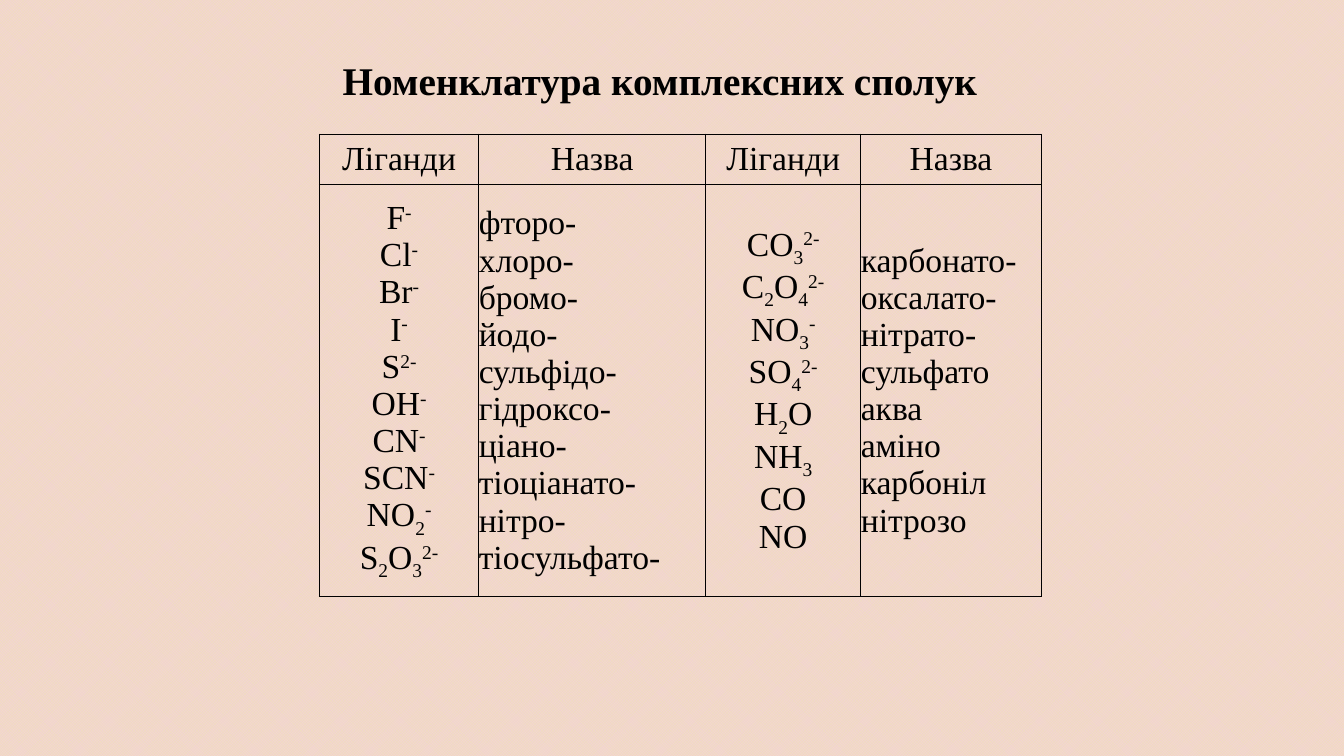
from dataclasses import dataclass

from lxml import etree
from pptx import Presentation
from pptx import util as u
from pptx.dml.color import RGBColor
from pptx.enum import dml, text
from pptx.oxml.ns import qn


@dataclass(frozen=True)
class Theme:
    font: str = "Times New Roman"
    ink: str = "000000"
    check_front: str = "F0E0B5"
    check_back: str = "F3D5D3"
    title_size: float = 28
    body_size: float = 24
    border_width: float = 1


@dataclass(frozen=True)
class Column:
    heading: str
    width: float
    alignment: text.PP_ALIGN
    entries: tuple[str, ...]


THEME = Theme()
TITLE = "Номенклатура комплексних сполук"
HEADER_HEIGHT, BODY_HEIGHT = 36, 294.5

# In formulas, spaces part the runs; _ marks a subscript and ^ a superscript
BASELINES = {"_": "-25000", "^": "30000"}
COLUMNS = (
    Column("Ліганди", 113.8, text.PP_ALIGN.CENTER,
           ("F ^-", "Cl ^-", "Br ^-", "I ^-", "S ^2-", "OH ^-", "CN ^-", "SCN ^-",
            "NO _2 ^-", "S _2 O _3 ^2-")),
    Column("Назва", 162, text.PP_ALIGN.JUSTIFY,
           ("фторо-", "хлоро-", "бромо-", "йодо-", "сульфідо-", "гідроксо-", "ціано-",
            "тіоціанато-", "нітро-", "тіосульфато-")),
    Column("Ліганди", 110.9, text.PP_ALIGN.CENTER,
           ("СO _3 ^2-", "C _2 O _4 ^2-", "NO _3 ^-", "SO _4 ^2-", "Н _2 О", "NH _3",
            "CO", "NO")),
    Column("Назва", 128.9, text.PP_ALIGN.JUSTIFY,
           ("карбонато-", "оксалато-", "нітрато-", "сульфато", "аква", "аміно",
            "карбоніл", "нітрозо")),
)


def apply(target, values: dict) -> None:
    for name, value in values.items():
        setattr(target, name, value)


def format_font(font, size: float, bold: bool = False) -> None:
    apply(font, {"name": THEME.font, "size": u.Pt(size), "bold": bold})
    font.color.rgb = RGBColor.from_string(THEME.ink)


def write_formula(paragraph, formula: str) -> None:
    for part in formula.split():
        run = paragraph.add_run()
        run.text = part.lstrip("_^")
        format_font(run.font, THEME.body_size)
        if part[0] in BASELINES:
            run._r.get_or_add_rPr().set("baseline", BASELINES[part[0]])


def add_borders(cell) -> None:
    properties = cell._tc.get_or_add_tcPr()
    for side in ("lnL", "lnR", "lnT", "lnB"):
        line = etree.SubElement(properties, qn(f"a:{side}"),
                                w=str(u.Pt(THEME.border_width)))
        fill = etree.SubElement(line, qn("a:solidFill"))
        etree.SubElement(fill, qn("a:srgbClr"), val=THEME.ink)


def fill_cell(cell, lines: tuple[str, ...], alignment: text.PP_ALIGN) -> None:
    apply(cell, {"margin_left": 0, "margin_right": 0, "margin_top": 0,
                 "margin_bottom": 0, "vertical_anchor": text.MSO_ANCHOR.MIDDLE})
    add_borders(cell)
    cell.fill.background()
    frame = cell.text_frame
    for index, line in enumerate(lines):
        paragraph = frame.add_paragraph() if index else frame.paragraphs[0]
        paragraph.alignment = alignment
        write_formula(paragraph, line)


def add_background(slide) -> None:
    fill = slide.background.fill
    fill.patterned()
    fill.pattern = dml.MSO_PATTERN.SMALL_CHECKER_BOARD
    fill.fore_color.rgb = RGBColor.from_string(THEME.check_front)
    fill.back_color.rgb = RGBColor.from_string(THEME.check_back)


def add_title(slide) -> None:
    title = slide.shapes.title
    apply(title, {"left": u.Pt(237.6), "top": u.Pt(36.7),
                  "width": u.Pt(513.4), "height": u.Pt(41)})
    frame = title.text_frame
    frame.text = TITLE
    apply(frame, {"word_wrap": True, "auto_size": text.MSO_AUTO_SIZE.NONE,
                  "vertical_anchor": text.MSO_ANCHOR.MIDDLE})
    paragraph = frame.paragraphs[0]
    apply(paragraph, {"alignment": text.PP_ALIGN.LEFT, "line_spacing": 1.0})
    format_font(paragraph.runs[0].font, THEME.title_size, bold=True)


def add_ligand_table(slide) -> None:
    width = sum(column.width for column in COLUMNS)
    table = slide.shapes.add_table(
        2, len(COLUMNS), u.Pt(228.2), u.Pt(95.8),
        u.Pt(width), u.Pt(HEADER_HEIGHT + BODY_HEIGHT)).table
    apply(table, {"first_row": False, "horz_banding": False})
    for row, height in zip(table.rows, (HEADER_HEIGHT, BODY_HEIGHT)):
        row.height = u.Pt(height)
    for index, column in enumerate(COLUMNS):
        table.columns[index].width = u.Pt(column.width)
        fill_cell(table.cell(0, index), (column.heading,), text.PP_ALIGN.CENTER)
        fill_cell(table.cell(1, index), column.entries, column.alignment)


def main() -> None:
    presentation = Presentation()
    apply(presentation, {"slide_width": u.Pt(960), "slide_height": u.Pt(540)})
    # Layout 5 is title only
    slide = presentation.slides.add_slide(presentation.slide_layouts[5])
    add_background(slide)
    add_title(slide)
    add_ligand_table(slide)
    presentation.save("out.pptx")


if __name__ == "__main__":
    main()
